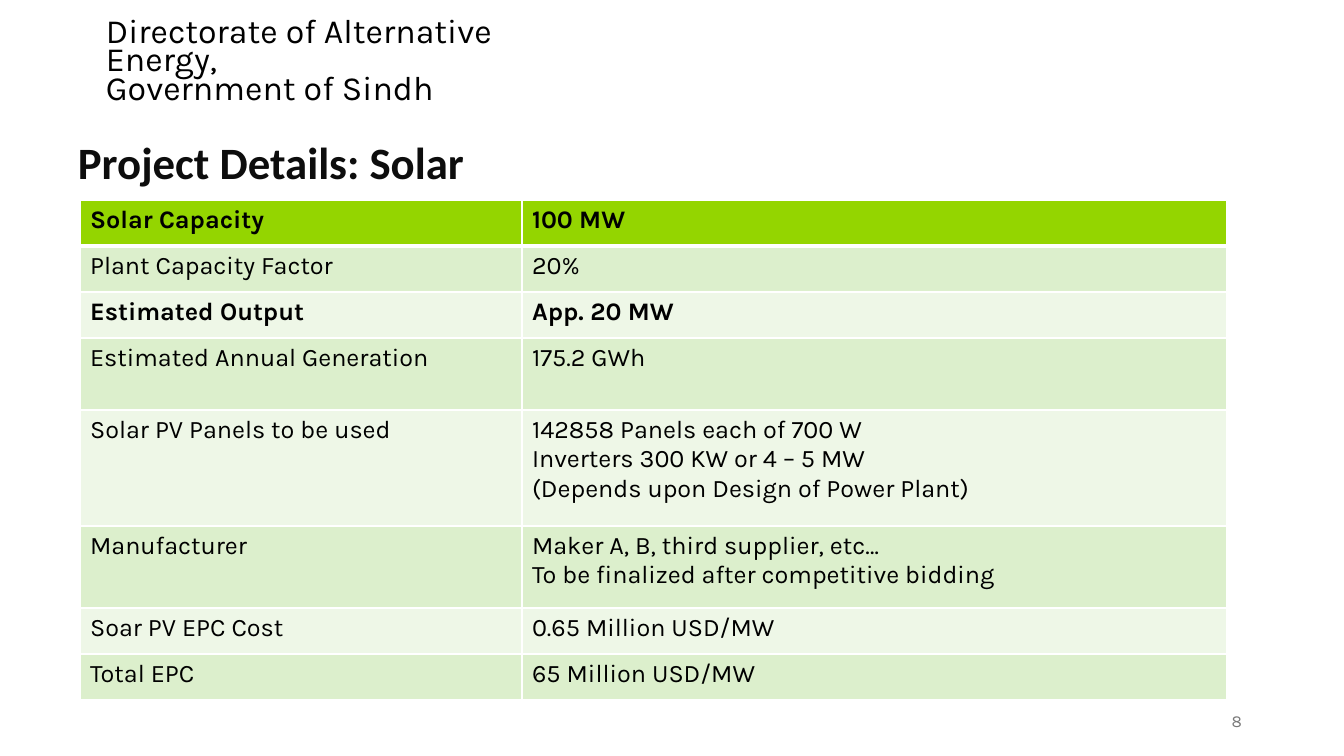
from dataclasses import dataclass
from lxml.etree import SubElement
from pptx import Presentation
from pptx.dml.color import RGBColor as Rgb
from pptx.enum.text import MSO_ANCHOR as Anchor, PP_ALIGN as Align
from pptx.oxml.ns import qn
from pptx.util import Pt

# Content
HEAD = ["Directorate of Alternative Energy,", "Government of Sindh"]
TITLE = ["Project Details: Solar"]
PAGE = ["8"]
# label, value lines, row height in px, bold
ROWS = [
    ("Solar Capacity", ["100 MW"], 46, True),
    ("Plant Capacity Factor", ["20%"], 46, False),
    ("Estimated Output", ["App. 20 MW"], 46, True),
    ("Estimated Annual Generation", ["175.2 GWh"], 72, False),
    ("Solar PV Panels to be used",
     ["142858 Panels each of 700 W", "Inverters 300 KW or 4 – 5 MW",
      "(Depends upon Design of Power Plant)"], 116, False),
    ("Manufacturer",
     ["Maker A, B, third supplier, etc…",
      "To be finalized after competitive bidding"], 82, False),
    ("Soar PV EPC Cost", ["0.65 Million USD/MW"], 46, False),
    ("Total EPC", ["65 Million USD/MW"], 46, False),
]
COLS = [442, 705]


@dataclass(frozen=True)
class Theme:
    body: str = "Karla"
    display: str = "Calibri"
    ink: str = "000000"
    dark: str = "0D0D0D"
    gray: str = "797979"
    white: str = "FFFFFF"
    top: str = "94D500"
    bands: tuple = ("EEF7E7", "DCEFCC")
    head: float = 24.2
    title: int = 32
    cell: int = 18
    page: int = 12


T = Theme()


def px(n):
    return round(n * 914400 / 100.8)


def write(frame, lines, size, color, font=T.body, bold=False, align=None, gap=None):
    for i, line in enumerate(lines):
        para = frame.paragraphs[0] if i == 0 else frame.add_paragraph()
        para.alignment = align
        para.line_spacing = gap
        run = para.add_run()
        run.text = line
        run.font.name = font
        run.font.size = Pt(size)
        run.font.bold = bold
        run.font.color.rgb = Rgb.from_string(color)


def label(slide, box, lines, size, color, **style):
    frame = slide.shapes.add_textbox(*map(px, box)).text_frame
    frame.word_wrap = True
    frame.vertical_anchor = Anchor.MIDDLE
    write(frame, lines, size, color, **style)


def edge(cell, side, width):
    line = SubElement(cell._tc.get_or_add_tcPr(), qn("a:ln" + side), w=str(Pt(width)))
    fill = SubElement(line, qn("a:solidFill"))
    SubElement(fill, qn("a:srgbClr"), val=T.white)


def grid(slide):
    high = sum(row[2] for row in ROWS)
    table = slide.shapes.add_table(
        len(ROWS), len(COLS), px(80), px(200), px(sum(COLS)), px(high)).table
    for col, wide in zip(table.columns, COLS):
        col.width = px(wide)
    for r, (name, value, tall, bold) in enumerate(ROWS):
        table.rows[r].height = px(tall)
        for c, lines in enumerate([[name], value]):
            cell = table.cell(r, c)
            # Thick rule between the header and the body
            for side in "LRTB":
                thick = (r, side) in [(0, "B"), (1, "T")]
                edge(cell, side, 3 if thick else 1)
            cell.fill.solid()
            cell.fill.fore_color.rgb = Rgb.from_string(T.bands[r % 2] if r else T.top)
            write(cell.text_frame, lines, T.cell, T.ink, bold=bold)
    table.cell(2, 1).text_frame.paragraphs[0].alignment = Align.JUSTIFY


def main():
    deck = Presentation()
    deck.slide_width, deck.slide_height = px(1344), px(756)
    slide = deck.slides.add_slide(deck.slide_layouts[6])
    # Masthead, page number, table and title
    label(slide, (96, 24, 468, 78), HEAD, T.head, T.ink, gap=0.7)
    label(slide, (950, 701, 302, 40), PAGE, T.page, T.gray, align=Align.RIGHT)
    grid(slide)
    label(slide, (68, 131, 832, 68), TITLE, T.title, T.dark,
          font=T.display, bold=True, gap=0.9)
    deck.save("out.pptx")


if __name__ == "__main__":
    main()
